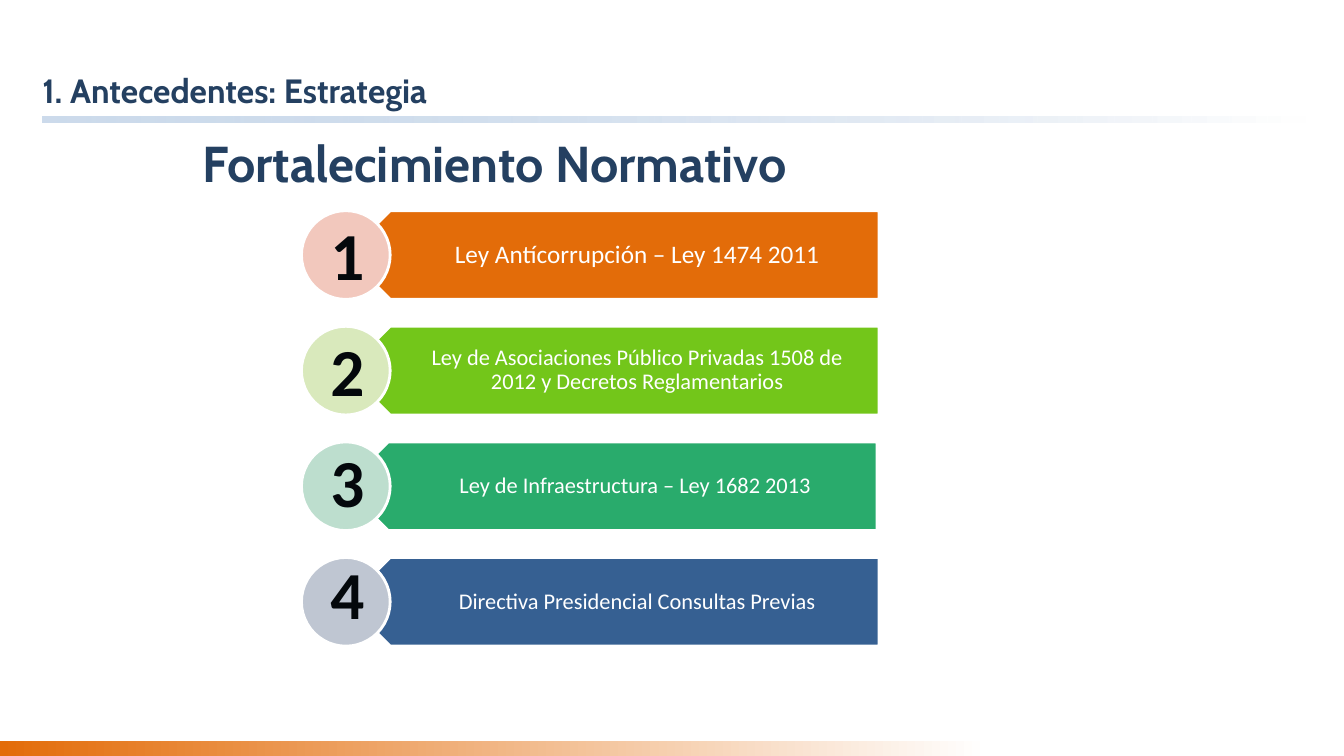
from dataclasses import dataclass

from lxml import etree
from pptx import Presentation
from pptx import util as u
from pptx.dml.color import RGBColor
from pptx.enum import shapes, text
from pptx.oxml.ns import qn

SLIDE_WIDTH = u.Inches(13.33)
SLIDE_HEIGHT = u.Inches(7.5)


@dataclass(frozen=True)
class Theme:
    heading_font: str = "Cabin"
    body_font: str = "Calibri"
    navy: str = "244061"
    orange: str = "E36C09"
    pale_blue: str = "9AB7D9"
    white: str = "FFFFFF"
    ink: str = "04080C"
    title_size: int = 36
    section_size: int = 24
    number_size: int = 48
    large_label_size: int = 18
    label_size: int = 16
    outline_width: int = 2


THEME = Theme()

# Horizontal and vertical measures are percentages of the slide's width and height.
MARGIN = 3.15
HEADING_WIDTH, HEADING_HEIGHT = 70.5, 10.93
FIRST_ROW, ROW_PITCH, ROW_HEIGHT = 27.87, 15.29, 11.73
CIRCLE_LEFT, CIRCLE_WIDTH = 22.43, 6.6
BANNER_LEFT, BANNER_WIDTH = CIRCLE_LEFT + CIRCLE_WIDTH / 2, 39.68
LABEL_INDENT = 1.65
NUMBER_LEFT, NUMBER_WIDTH, NUMBER_HEIGHT = 23.85, 4.05, 12.13

# Label, type size, banner colour, circle colour, banner shift, number shift
LAWS = [
    ("Ley Antícorrupción – Ley 1474 2011", THEME.large_label_size,
     THEME.orange, "F2C8BD", 0, -0.27),
    ("Ley de Asociaciones Público Privadas 1508 de 2012 y Decretos Reglamentarios",
     THEME.label_size, "73C61A", "D9E9BC", 0, -0.27),
    ("Ley de Infraestructura – Ley 1682 2013", THEME.label_size,
     "29AB6C", "BDDECE", -0.15, -0.8),
    ("Directiva Presidencial Consultas Previas", THEME.label_size,
     "366092", "BFC6D2", 0, -1.33),
]


def place(left, top, width, height):
    """Turn percentages of the slide into lengths."""
    return (int(SLIDE_WIDTH * left / 100), int(SLIDE_HEIGHT * top / 100),
            int(SLIDE_WIDTH * width / 100), int(SLIDE_HEIGHT * height / 100))


def add_outlined_shape(slide, kind, box, color):
    shape = slide.shapes.add_shape(kind, *place(*box))
    shape.shadow.inherit = False
    shape.fill.solid()
    shape.fill.fore_color.rgb = RGBColor.from_string(color)
    shape.line.color.rgb = RGBColor.from_string(THEME.white)
    shape.line.width = u.Pt(THEME.outline_width)
    return shape


def add_fading_bar(slide, box, color, opacity=100):
    """Add a bar that fades from a colour at the left to white."""
    bar = slide.shapes.add_shape(shapes.MSO_SHAPE.RECTANGLE, *place(*box))
    bar.shadow.inherit = False
    bar.line.fill.background()
    bar.fill.gradient()
    bar.fill.gradient_angle = 0
    for stop, stop_color in zip(bar.fill.gradient_stops, (color, THEME.white)):
        stop.color.rgb = RGBColor.from_string(stop_color)
    if opacity < 100:
        first_color = next(bar.fill._xPr.iter(qn("a:srgbClr")))
        etree.SubElement(first_color, qn("a:alpha"), val=str(opacity * 1000))


def add_text(slide, box, content, font_name, size, color, bold=False):
    text_box = slide.shapes.add_textbox(*place(*box))
    frame = text_box.text_frame
    frame.text = content
    frame.word_wrap = True
    font = frame.paragraphs[0].runs[0].font
    font.name, font.size, font.bold = font_name, u.Pt(size), bold
    font.color.rgb = RGBColor.from_string(color)
    return frame


def set_margins(frame, left, top, right, bottom):
    frame.margin_left, frame.margin_top = u.Inches(left), u.Inches(top)
    frame.margin_right, frame.margin_bottom = u.Inches(right), u.Inches(bottom)


def add_heading(slide, left, top, content, size):
    frame = add_text(slide, (left, top, HEADING_WIDTH, HEADING_HEIGHT), content,
                     THEME.heading_font, size, THEME.navy, bold=True)
    frame.vertical_anchor = text.MSO_ANCHOR.BOTTOM
    set_margins(frame, 0, 0, 0, 0)


def add_law(slide, index, label, size, color, circle_color, shift, number_shift):
    top = FIRST_ROW + index * ROW_PITCH
    left = BANNER_LEFT + shift
    banner = add_outlined_shape(slide, shapes.MSO_SHAPE.PENTAGON,
                                (left, top, BANNER_WIDTH, ROW_HEIGHT), color)
    banner.rotation = 180

    label_box = (left + LABEL_INDENT, top, BANNER_WIDTH - LABEL_INDENT, ROW_HEIGHT)
    frame = add_text(slide, label_box, label, THEME.body_font, size, THEME.white)
    frame.vertical_anchor = text.MSO_ANCHOR.MIDDLE
    set_margins(frame, 0.39, 0.07, 0.12, 0.07)
    frame.paragraphs[0].alignment = text.PP_ALIGN.CENTER
    frame.paragraphs[0].line_spacing = 0.9

    add_outlined_shape(slide, shapes.MSO_SHAPE.OVAL,
                       (CIRCLE_LEFT, top, CIRCLE_WIDTH, ROW_HEIGHT), circle_color)
    number_box = (NUMBER_LEFT, top + number_shift, NUMBER_WIDTH, NUMBER_HEIGHT)
    number = add_text(slide, number_box, str(index + 1), THEME.body_font,
                      THEME.number_size, THEME.ink, bold=True)
    number.word_wrap = False
    number.auto_size = text.MSO_AUTO_SIZE.SHAPE_TO_FIT_TEXT


def main():
    presentation = Presentation()
    presentation.slide_width, presentation.slide_height = SLIDE_WIDTH, SLIDE_HEIGHT
    slide = presentation.slides.add_slide(presentation.slide_layouts[6])

    add_fading_bar(slide, (MARGIN, 15.43, 94, 0.72), THEME.pale_blue, opacity=50)
    add_fading_bar(slide, (0, 98, 73.5, 2), THEME.orange)
    add_heading(slide, 15.08, 14.53, "Fortalecimiento Normativo", THEME.title_size)
    for index, law in enumerate(LAWS):
        add_law(slide, index, *law)
    add_heading(slide, MARGIN, 3.6, "1. Antecedentes: Estrategia", THEME.section_size)

    presentation.save("out.pptx")


if __name__ == "__main__":
    main()
